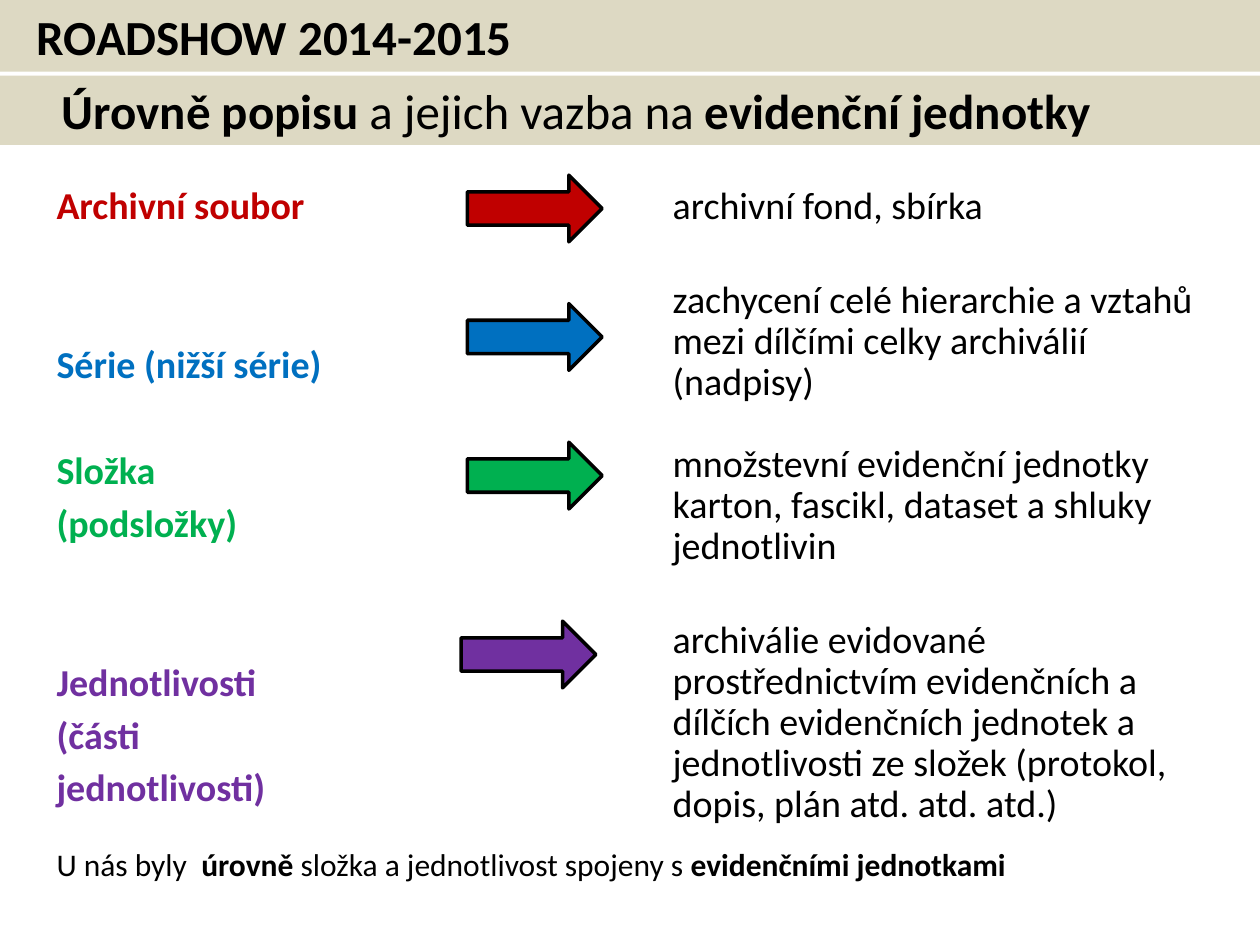
from dataclasses import dataclass

from pptx import Presentation, util as u
from pptx.dml.color import RGBColor
from pptx.enum import shapes, text

# Grid of 100 columns by 75 rows covering the slide
WIDTH, HEIGHT = u.Inches(10), u.Inches(7.5)
COLUMN, ROW = WIDTH / 100, HEIGHT / 75
COLORS = {"band": "DDD9C3", "ink": "000000", "fonds": "C00000",
          "series": "0070C0", "folder": "00B050", "item": "7030A0"}
FONT = "Calibri"
BODY_SIZE = 21.7
LINE_GAP = 4        # points between lines of a label
EMPTY_LINE = 30.5   # points taken by one skipped line, gap included

Run = tuple[str, bool]


@dataclass
class Box:
    left: float
    top: float
    width: float
    height: float

    def emu(self) -> list[int]:
        return [round(self.left * COLUMN), round(self.top * ROW),
                round(self.width * COLUMN), round(self.height * ROW)]


@dataclass
class Level:
    color: str
    labels: list[str]
    skipped_lines: int
    units: str
    units_gap: float
    arrow_left: float
    arrow_top: float


LEVELS = [
    Level("fonds", ["Archivní soubor"], 0, "archivní fond, sbírka", 0, 37.1, 13.9),
    Level("series", ["Série (nižší série)"], 2,
          "zachycení celé hierarchie a vztahů mezi dílčími celky archiválií (nadpisy)",
          EMPTY_LINE, 37.1, 24.1),
    Level("folder", ["Složka", "(podsložky)"], 1,
          "množstevní evidenční jednotky karton, fascikl, dataset a shluky jednotlivin",
          23.5, 37.1, 35.1),
    Level("item", ["Jednotlivosti", "(části", "jednotlivosti)"], 2,
          "archiválie evidované prostřednictvím evidenčních a dílčích evidenčních "
          "jednotek a jednotlivosti ze složek (protokol, dopis, plán atd. atd. atd.)",
          EMPTY_LINE, 36.6, 49.3),
]


def rgb(name: str) -> RGBColor:
    return RGBColor.from_string(COLORS[name])


def style(paragraph, size: float, color: str = "ink") -> None:
    paragraph.alignment = text.PP_ALIGN.LEFT
    paragraph.font.name = FONT
    paragraph.font.size = u.Pt(size)
    paragraph.font.color.rgb = rgb(color)


def write_runs(paragraph, runs: list[Run], size: float) -> None:
    style(paragraph, size)
    for words, bold in runs:
        run = paragraph.add_run()
        run.text = words
        run.font.bold = bold


def add_shape(slide, kind, box: Box, fill: str):
    shape = slide.shapes.add_shape(kind, *box.emu())
    shape.shadow.inherit = False
    shape.fill.solid()
    shape.fill.fore_color.rgb = rgb(fill)
    return shape


def add_band(slide, box: Box, inset: float, runs: list[Run]) -> None:
    band = add_shape(slide, shapes.MSO_SHAPE.RECTANGLE, box, "band")
    band.line.fill.background()
    frame = band.text_frame
    frame.word_wrap = True
    frame.vertical_anchor = text.MSO_ANCHOR.MIDDLE
    frame.margin_left = round(inset * COLUMN)
    write_runs(frame.paragraphs[0], runs, 28)


def add_text(slide, box: Box):
    frame = slide.shapes.add_textbox(*box.emu()).text_frame
    frame.word_wrap = True
    return frame


def next_paragraph(frame, first: bool):
    return frame.paragraphs[0] if first else frame.add_paragraph()


def add_labels(slide, box: Box) -> None:
    frame = add_text(slide, box)
    for level in LEVELS:
        for position, label in enumerate(level.labels):
            first = level is LEVELS[0] and position == 0
            paragraph = next_paragraph(frame, first)
            paragraph.text = label
            style(paragraph, BODY_SIZE, level.color)
            paragraph.font.bold = True
            skipped = level.skipped_lines if position == 0 else 0
            if not first:
                paragraph.space_before = u.Pt(LINE_GAP + skipped * EMPTY_LINE)


def add_units(slide, box: Box) -> None:
    frame = add_text(slide, box)
    for level in LEVELS:
        first = level is LEVELS[0]
        paragraph = next_paragraph(frame, first)
        paragraph.text = level.units
        style(paragraph, BODY_SIZE)
        if not first:
            paragraph.line_spacing = 0.9
            paragraph.space_before = u.Pt(level.units_gap)


def add_arrow(slide, level: Level) -> None:
    box = Box(level.arrow_left, level.arrow_top, 10.7, 5.3)
    arrow = add_shape(slide, shapes.MSO_SHAPE.RIGHT_ARROW, box, level.color)
    arrow.line.color.rgb = rgb("ink")
    arrow.line.width = u.Pt(2)


def main() -> None:
    deck = Presentation()
    deck.slide_width, deck.slide_height = WIDTH, HEIGHT
    slide = deck.slides.add_slide(deck.slide_layouts[6])

    # Title bands
    add_band(slide, Box(0, 6, 100, 5.5), 4.9,
             [("Úrovně popisu ", True), ("a jejich vazba na ", False),
              ("evidenční jednotky", True)])
    add_band(slide, Box(0, 0, 100, 5.7), 2.9, [("ROADSHOW 2014-2015", True)])

    # Levels of description, arrows and matching units
    add_labels(slide, Box(3.5, 13.9, 45.8, 51.7))
    add_units(slide, Box(52.4, 13.9, 44.2, 53.9))
    for level in LEVELS:
        add_arrow(slide, level)

    # Closing remark
    remark = add_text(slide, Box(3.5, 66.6, 88.2, 4))
    write_runs(remark.paragraphs[0],
               [("U nás byly  ", False), ("úrovně", True),
                (" složka a jednotlivost spojeny s ", False),
                ("evidenčními jednotkami", True)], 18)

    deck.save("out.pptx")


if __name__ == "__main__":
    main()
